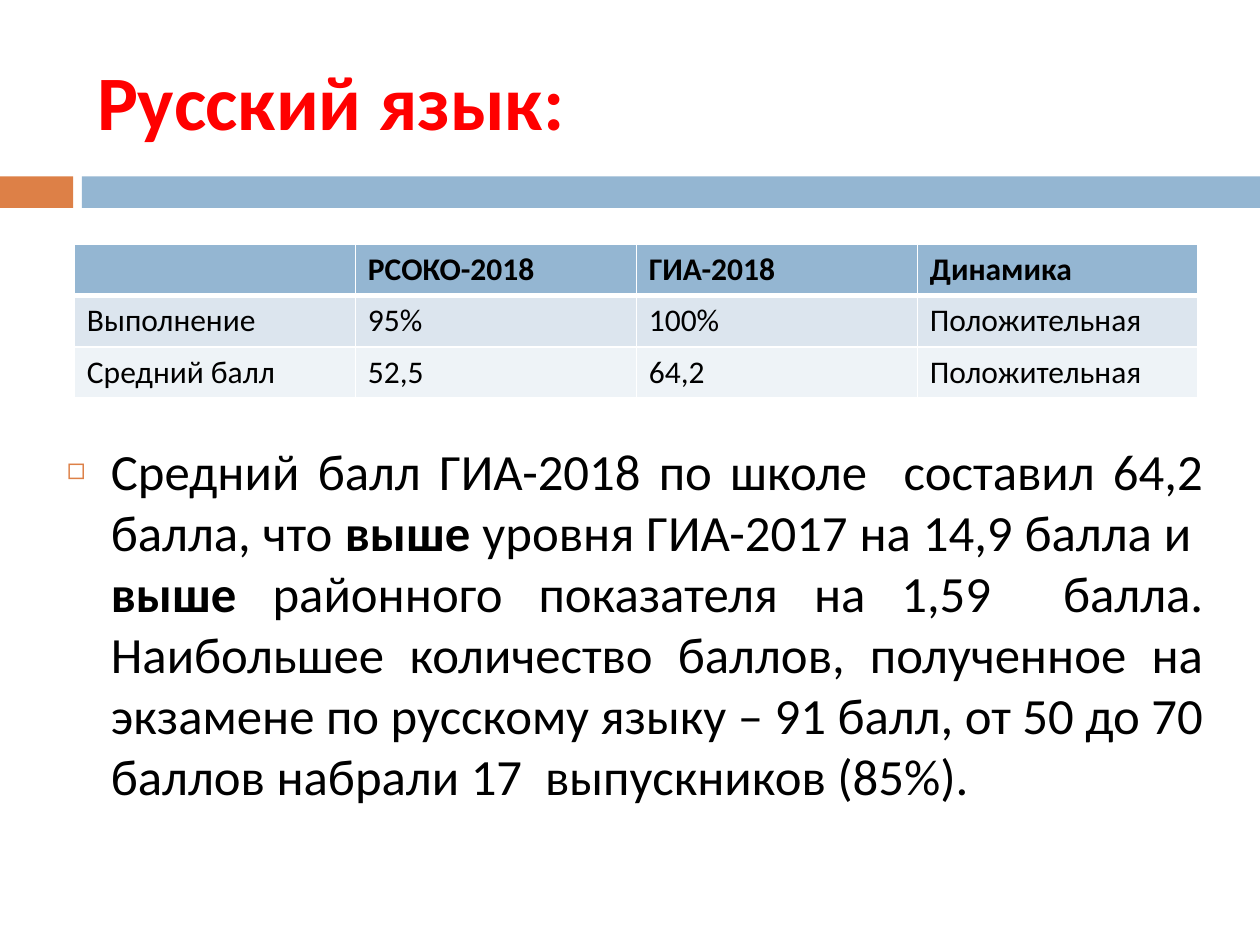
import pptx
import pptx.util
import pptx.dml.color
import pptx.enum.shapes
import pptx.enum.text
import pptx.oxml
import pptx.oxml.ns
from pptx.util import Inches

COLORS = {
    "title": "FF0000",
    "text": "000000",
    "orange": "DD8047",
    "blue": "94B6D2",
    "band_dark": "DCE5EE",
    "band_light": "EEF3F7",
    "border": "FFFFFF",
}


def rgb(name):
    return pptx.dml.color.RGBColor.from_string(COLORS[name])


def xml(tag, attrs="", inner=""):
    ns = pptx.oxml.ns.nsdecls("a")
    return pptx.oxml.parse_xml(f"<a:{tag} {ns} {attrs}>{inner}</a:{tag}>")


class SlideBuilder:
    def __init__(self, slide, font="Calibri"):
        self.s = slide
        self.font = font

    def style(self, r, size, color="text", bold=False):
        r.font.name = self.font
        r.font.size = pptx.util.Pt(size)
        r.font.bold = bold
        r.font.color.rgb = rgb(color)

    def place(self, sp, left, top, width, height):
        sp.left, sp.top = Inches(left), Inches(top)
        sp.width, sp.height = Inches(width), Inches(height)

    def bar(self, left, top, width, height, color):
        sp = self.s.shapes.add_shape(
            pptx.enum.shapes.MSO_SHAPE.RECTANGLE,
            Inches(left), Inches(top), Inches(width), Inches(height))
        sp.shadow.inherit = False
        sp.fill.solid()
        sp.fill.fore_color.rgb = rgb(color)
        sp.line.fill.background()

    def title(self, text, box, size):
        sp = self.s.shapes.title
        self.place(sp, *box)
        tf = sp.text_frame
        tf.text = text
        tf.auto_size = pptx.enum.text.MSO_AUTO_SIZE.NONE
        tf.vertical_anchor = pptx.enum.text.MSO_ANCHOR.MIDDLE
        p = tf.paragraphs[0]
        p.alignment = pptx.enum.text.PP_ALIGN.LEFT
        self.style(p.runs[0], size, "title", bold=True)

    def bullet(self, parts, box, size):
        """Fill the body with one bullet; parts are (text, bold) pairs."""
        sp = self.s.placeholders[1]
        self.place(sp, *box)
        tf = sp.text_frame
        tf.auto_size = pptx.enum.text.MSO_AUTO_SIZE.NONE
        p = tf.paragraphs[0]
        p.alignment = pptx.enum.text.PP_ALIGN.JUSTIFY
        p.space_before = pptx.util.Pt(7)
        for text, bold in parts:
            r = p.add_run()
            r.text = text
            self.style(r, size, bold=bold)
        # Hanging indent and bullet mark
        pPr = p._p.get_or_add_pPr()
        pPr.set("marL", str(Inches(0.35)))
        pPr.set("indent", str(-Inches(0.35)))
        pPr.append(xml("buClr", inner=f'<a:srgbClr val="{COLORS["orange"]}"/>'))
        pPr.append(xml("buSzPct", 'val="60000"'))
        pPr.append(xml("buChar", 'char="◻"'))

    def borders(self, cell, bottom):
        tcPr = cell._tc.get_or_add_tcPr()
        fill = f'<a:solidFill><a:srgbClr val="{COLORS["border"]}"/></a:solidFill>'
        widths = {"lnL": 1, "lnR": 1, "lnT": 1, "lnB": bottom}
        for i, (tag, width) in enumerate(widths.items()):
            tcPr.insert(i, xml(tag, f'w="{pptx.util.Pt(width)}"', fill))

    def table(self, rows, fills, box, size):
        left, top, width, height = map(Inches, box)
        table = self.s.shapes.add_table(
            len(rows), len(rows[0]), left, top, width, height).table
        for i, (row, fill) in enumerate(zip(rows, fills)):
            header = i == 0
            for j, text in enumerate(row):
                cell = table.cell(i, j)
                cell.fill.solid()
                cell.fill.fore_color.rgb = rgb(fill)
                # Thick rule between the header and the first row
                self.borders(cell, 3 if header else 1)
                if i == 1:
                    cell._tc.tcPr.find(pptx.oxml.ns.qn("a:lnT")).set(
                        "w", str(pptx.util.Pt(3)))
                cell.text_frame.text = text
                for r in cell.text_frame.paragraphs[0].runs:
                    self.style(r, size, bold=header)


def main():
    prs = pptx.Presentation()
    prs.slide_width, prs.slide_height = Inches(10), Inches(7.5)
    b = SlideBuilder(prs.slides.add_slide(prs.slide_layouts[1]))

    # Accent bars
    b.bar(0, 1.4, 0.58, 0.25, "orange")
    b.bar(0.65, 1.4, 9.35, 0.25, "blue")

    # Title
    b.title("Русский язык:", (0.67, 0.25, 8.92, 1.08), 44)

    # Summary text
    b.bullet([
        ("Средний балл ГИА-2018 по школе  составил 64,2 балла, что ", False),
        ("выше ", True),
        ("уровня ГИА-2017 на 14,9 балла и  ", False),
        ("выше ", True),
        ("районного показателя на 1,59  балла. Наибольшее количество баллов, "
         "полученное на экзамене по русскому языку – 91 балл, от 50 до 70 "
         "баллов набрали 17  выпускников (85%).", False),
    ], (0.43, 3.44, 9.23, 3.42), 29)

    # Results table
    b.table([
        ["", "РСОКО-2018", "ГИА-2018", "Динамика"],
        ["Выполнение", "95%", "100%", "Положительная"],
        ["Средний балл", "52,5", "64,2", "Положительная"],
    ], ["blue", "band_dark", "band_light"], (0.59, 1.94, 8.92, 1.22), 18)

    prs.save("out.pptx")


if __name__ == "__main__":
    main()
